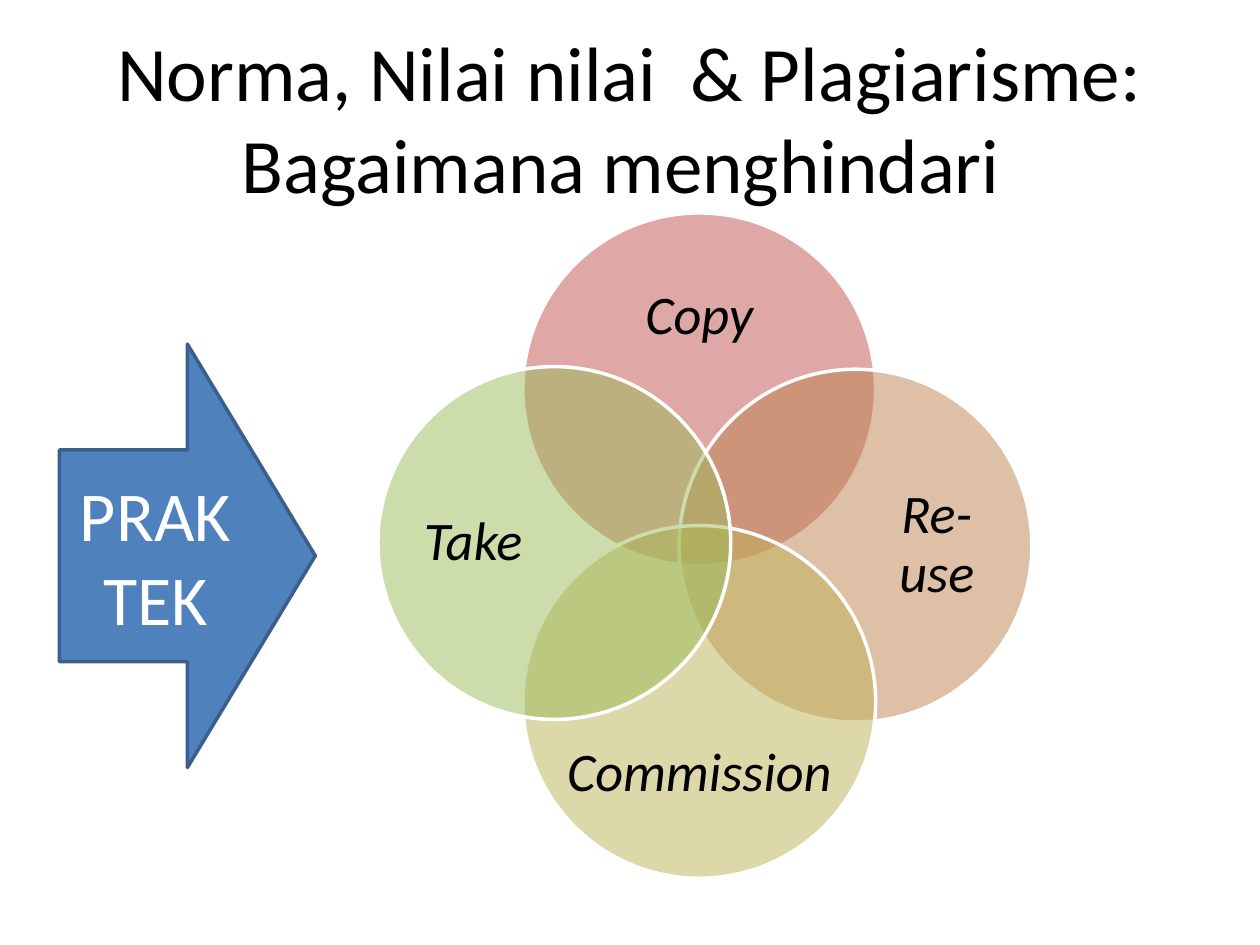
from pptx import Presentation
from pptx.dml.color import RGBColor as Rgb
from pptx.enum.shapes import MSO_SHAPE as Shape
from pptx.enum.text import MSO_ANCHOR as Anchor, PP_ALIGN as Align
from pptx.oxml import parse_xml
from pptx.oxml.ns import nsdecls
from pptx.util import Pt

# Content
TITLE = "Norma, Nilai nilai  & Plagiarisme: Bagaimana menghindari "
ARROW = "PRAKTEK"
RINGS = [  # label, fill, offset of the ring from the hub, side of the label
    ("Copy", "C0504D", (0, -89.3), (0, -1)),
    ("Re-use", "BE8351", (89.3, 0), (1, 0)),
    ("Commission", "BDB255", (0, 89.3), (0, 1)),
    ("Take", "9BBB59", (-82.8, -1.5), (-1, 0)),
]

THEME = {
    "font": "Calibri", "ink": "000000", "white": "FFFFFF",
    "arrow": "4F81BD", "edge": "3A5F8C",
    "title": 44, "big": 40, "label": 31, "line": 2, "alpha": 50,
}

# Layout, in points
HUB = (399.6, 311.8)
SIZE = 201.6
WIDE, TALL = (155, 64), (78, 155)
REACH = (46.4, 41.4)


def write(shape, text, size, color="ink", italic=False, inset=None, space=1):
    frame = shape.text_frame
    frame.word_wrap = True
    frame.vertical_anchor = Anchor.MIDDLE
    if inset is not None:
        frame.margin_left = frame.margin_right = Pt(inset)
        frame.margin_top = frame.margin_bottom = Pt(inset)
    para = frame.paragraphs[0]
    para.alignment = Align.CENTER
    para.line_spacing = space
    run = para.add_run()
    run.text = text
    font = run.font
    font.name, font.size, font.italic = THEME["font"], Pt(THEME[size]), italic
    font.color.rgb = Rgb.from_string(THEME[color])


def draw(slide, kind, box, fill, line, alpha=None):
    shape = slide.shapes.add_shape(kind, *map(Pt, box))
    shape.shadow.inherit = False
    shape.fill.solid()
    shape.fill.fore_color.rgb = Rgb.from_string(fill)
    if alpha:
        tint = shape.fill._xPr.find(".//{*}srgbClr")
        tint.append(parse_xml(f'<a:alpha {nsdecls("a")} val="{alpha * 1000}"/>'))
    shape.line.color.rgb = Rgb.from_string(line)
    shape.line.width = Pt(THEME["line"])
    return shape


def center(x, y, wide, tall):
    return x - wide / 2, y - tall / 2, wide, tall


def main():
    deck = Presentation()
    deck.slide_width, deck.slide_height = Pt(720), Pt(540)
    slide = deck.slides.add_slide(deck.slide_layouts[6])

    # Title
    head = slide.shapes.add_textbox(Pt(36), Pt(21.6), Pt(648), Pt(90))
    write(head, TITLE, "title")

    # Overlapping rings, each with its label toward the outer side
    for text, fill, (dx, dy), (sx, sy) in RINGS:
        x, y = HUB[0] + dx, HUB[1] + dy
        draw(slide, Shape.OVAL, center(x, y, SIZE, SIZE), fill,
             THEME["white"], THEME["alpha"])
        area = center(x + sx * REACH[0], y + sy * REACH[1],
                      *(TALL if sx else WIDE))
        label = slide.shapes.add_textbox(*map(Pt, area))
        write(label, text, "label", italic=True, inset=0, space=0.9)

    # Arrow
    arrow = draw(slide, Shape.RIGHT_ARROW, (34, 196.6, 146.2, 242),
                 THEME["arrow"], THEME["edge"])
    write(arrow, ARROW, "big", color="white")

    deck.save("out.pptx")


if __name__ == "__main__":
    main()
